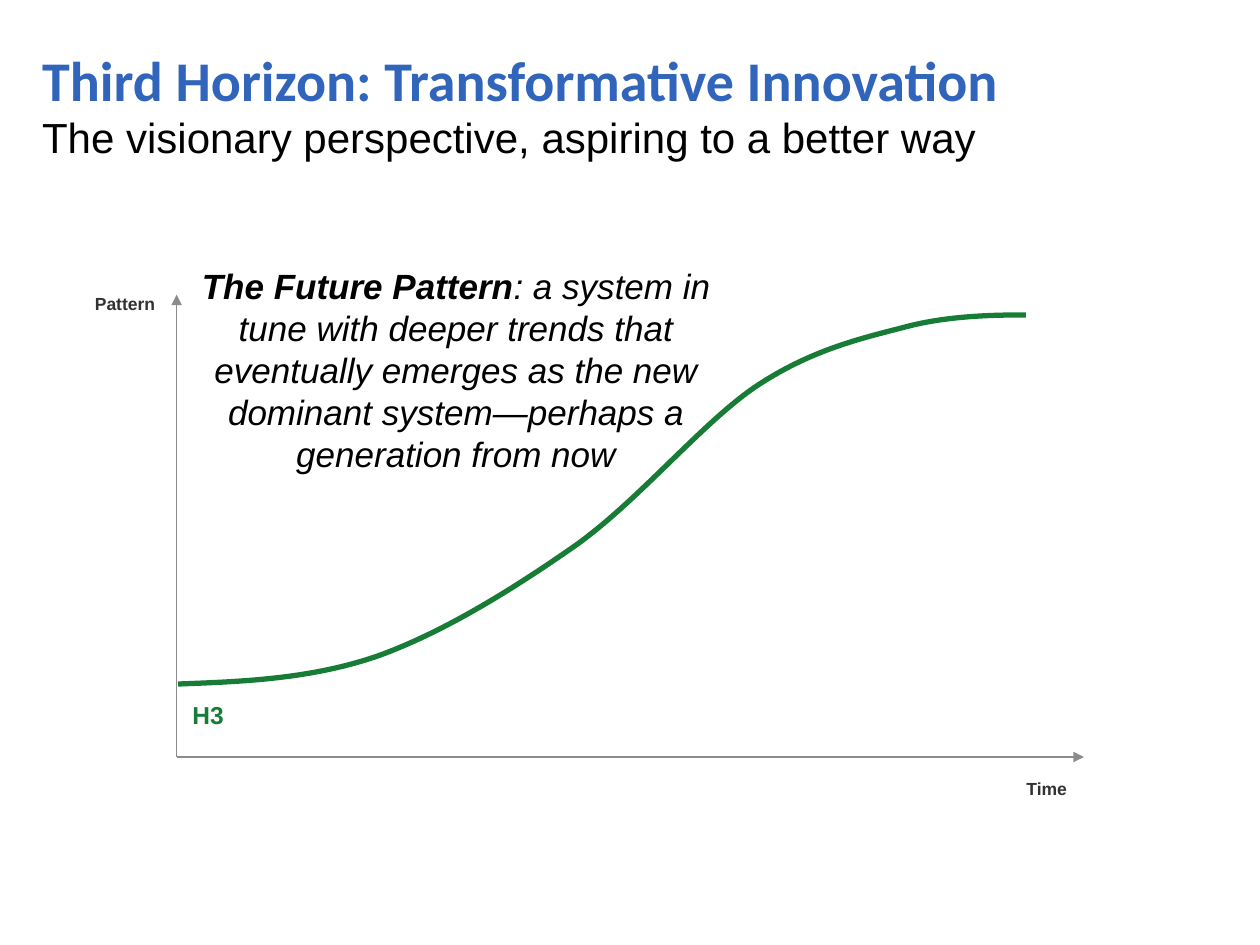
from lxml.etree import SubElement
from pptx import Presentation
from pptx.dml.color import RGBColor
from pptx.enum.shapes import MSO_CONNECTOR
from pptx.enum.text import MSO_ANCHOR, PP_ALIGN
from pptx.oxml.ns import qn
from pptx.util import Cm, Pt

COLORS = {
    "title": "3165BB",
    "text": "000000",
    "label": "313131",
    "axis": "8C8C8C",
    "horizon": "177D36",
}

# Start point, then three points (two controls and an end) per Bezier segment,
# in cm from the top left of the chart area
HORIZON_CURVE = [
    (0.03, 7.85),
    (1.35, 7.80), (2.69, 7.75), (4.04, 7.29),
    (5.38, 6.81), (6.78, 5.94), (8.08, 5.03),
    (9.35, 4.11), (10.59, 2.59), (11.68, 1.85),
    (12.78, 1.12), (13.77, 0.89), (14.66, 0.66),
    (15.57, 0.41), (16.61, 0.41), (17.12, 0.41),
]


def rgb(name):
    return RGBColor.from_string(COLORS[name])


def add_text(slide, box, runs, size, color, font="Arial", bold=False,
             align=PP_ALIGN.CENTER, wrap=True):
    """Add a one-paragraph text box without insets; box is in cm."""
    frame = slide.shapes.add_textbox(*map(Cm, box)).text_frame
    frame.margin_left = frame.margin_top = 0
    frame.margin_right = frame.margin_bottom = 0
    frame.word_wrap = wrap
    paragraph = frame.paragraphs[0]
    paragraph.alignment = align
    for words in runs:
        paragraph.add_run().text = words
    paragraph.font.name = font
    paragraph.font.size = Pt(size)
    paragraph.font.bold = bold
    paragraph.font.color.rgb = rgb(color)
    return frame


def add_heading(slide, left, top, width):
    title = add_text(slide, (left, top, width, 1.73),
                     ["Third Horizon: Transformative Innovation"],
                     32, "title", "Calibri", True, PP_ALIGN.LEFT)
    title.vertical_anchor = MSO_ANCHOR.MIDDLE
    title.paragraphs[0].line_spacing = 0.9
    add_text(slide, (left, top + 1.44, width, 2.1),
             ["The visionary perspective, aspiring to a better way"],
             24, "text", align=PP_ALIGN.LEFT)


def add_axis(slide, origin, tip):
    axis = slide.shapes.add_connector(
        MSO_CONNECTOR.STRAIGHT, *map(Cm, origin + tip))
    axis.line.color.rgb = rgb("axis")
    axis.line.width = Pt(0.75)
    SubElement(axis.line._get_or_add_ln(), qn("a:tailEnd"), type="triangle")
    SubElement(axis._element.spPr, qn("a:effectLst"))


def add_curve(slide, left, top, points):
    start, *rest = [(Cm(left + x), Cm(top + y)) for x, y in points]
    builder = slide.shapes.build_freeform(*start)
    builder.add_line_segments(rest, close=False)
    curve = builder.convert_to_shape()
    curve.shadow.inherit = False
    curve.fill.background()
    curve.line.color.rgb = rgb("horizon")
    curve.line.width = Pt(3)

    # Turn each group of three line segments into one cubic Bezier
    outline = curve._element.spPr.find(".//" + qn("a:path"))
    segments = outline.findall(qn("a:lnTo"))
    for i in range(0, len(segments), 3):
        bezier = SubElement(outline, qn("a:cubicBezTo"))
        for segment in segments[i:i + 3]:
            bezier.append(segment[0])
            outline.remove(segment)


def add_horizon_chart(slide, left, top, width, height):
    origin = (left, top + height)
    add_text(slide, (left - 1.65, top - 0.03, 1.22, 0.43), ["Pattern"],
             10, "label", bold=True, wrap=False)

    description = add_text(
        slide, (left - 0.18, top - 0.61, 11.63, 4.27),
        ["The Future Pattern",
         ": a system in tune with deeper trends that eventually emerges as "
         "the new dominant system—perhaps a generation from now"],
        20, "text").paragraphs[0]
    description.line_spacing = Pt(24)
    description.font.italic = True
    description.runs[0].font.bold = True

    add_axis(slide, origin, (left, top))
    add_axis(slide, origin, (left + width, top + height))
    add_text(slide, (left + 17.12, top + height + 0.43, 0.84, 0.43), ["Time"],
             10, "label", bold=True, wrap=False)
    add_text(slide, (left + 0.18, top + 8.18, 0.91, 0.61), ["H3"],
             14, "horizon", bold=True)
    add_curve(slide, left, top, HORIZON_CURVE)


def main():
    deck = Presentation()
    deck.slide_width, deck.slide_height = Cm(25.4), Cm(19.05)
    slide = deck.slides.add_slide(deck.slide_layouts[6])
    add_heading(slide, 0.85, 0.81, 24.5)
    add_horizon_chart(slide, 3.56, 5.94, 18.29, 9.32)
    deck.save("out.pptx")


if __name__ == "__main__":
    main()
